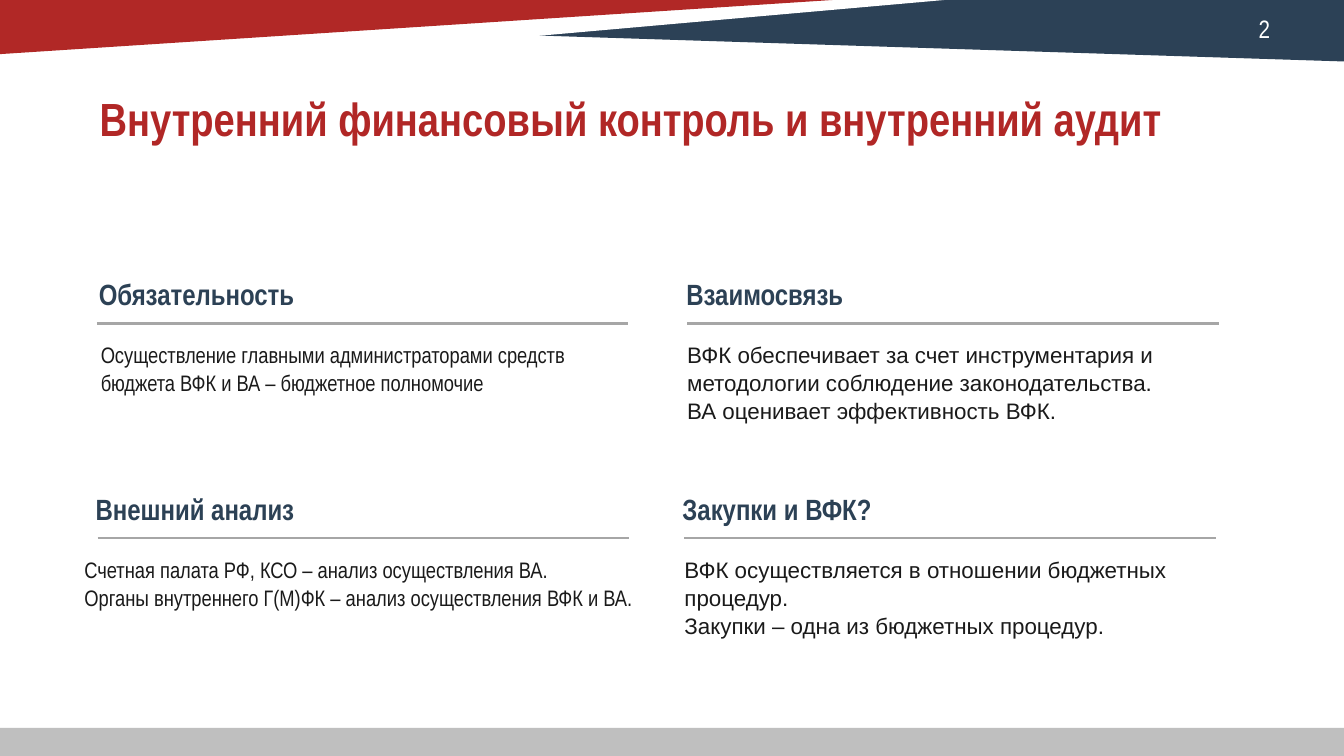
"""Build a slide on internal financial control and internal audit."""
from dataclasses import dataclass

from lxml.etree import SubElement
from pptx import Presentation
from pptx.dml.color import RGBColor
from pptx.enum.shapes import MSO_CONNECTOR as Connector, MSO_SHAPE as Shape
from pptx.oxml.ns import qn
from pptx.util import Cm, Pt

COLORS = {
    "navy": "2C4156",
    "heading": "2C4155",
    "red": "B12826",
    "title": "B12726",
    "text": "1A1A1A",
    "rule": "A6A6A6",
    "footer": "BFBFBF",
    "white": "FFFFFF",
}
NARROW = "Arial Narrow"
WIDTH, HEIGHT = 33.87, 19.05
COLUMN_WIDTH = 13.39
FIRST_ROW, ROW_PITCH = 6.93, 5.41
RULE_OFFSET, BODY_OFFSET = 1.22, 1.63


@dataclass
class Topic:
    row: int
    heading: str
    lines: list
    heading_left: float
    rule_left: float
    body_left: float
    body_width: float = COLUMN_WIDTH
    body_font: str = NARROW


TOPICS = [
    Topic(0, "Обязательность",
          ["Осуществление главными администраторами средств бюджета ВФК и ВА – бюджетное полномочие"],
          2.49, 2.44, 2.54),
    Topic(0, "Взаимосвязь",
          ["ВФК обеспечивает за счет инструментария и методологии соблюдение законодательства.",
           "ВА оценивает эффективность ВФК."],
          17.3, 17.32, 17.32, body_font="Arial"),
    Topic(1, "Внешний анализ",
          ["Счетная палата РФ, КСО – анализ осуществления ВА.",
           "Органы внутреннего Г(М)ФК – анализ осуществления ВФК и ВА."],
          2.41, 2.46, 2.13, body_width=14.4),
    Topic(1, "Закупки и ВФК?",
          ["ВФК осуществляется в отношении бюджетных процедур.",
           "Закупки – одна из бюджетных процедур."],
          17.2, 17.25, 17.25, body_font="Arial"),
]


def rgb(name):
    return RGBColor.from_string(COLORS[name])


def paint(shape, color):
    shape.shadow.inherit = False
    shape.fill.solid()
    shape.fill.fore_color.rgb = rgb(color)
    shape.line.fill.background()


def add_wedge(slide, points, color):
    start, *others = [(Cm(x), Cm(y)) for x, y in points]
    builder = slide.shapes.build_freeform(*start)
    builder.add_line_segments(others, close=True)
    paint(builder.convert_to_shape(), color)


def add_text(slide, box, lines, size, color, font=NARROW, bold=False, spacing=1.05):
    frame = slide.shapes.add_textbox(*map(Cm, box)).text_frame
    frame.word_wrap = True
    frame.margin_left = frame.margin_right = frame.margin_top = frame.margin_bottom = 0
    for index, line in enumerate(lines):
        paragraph = frame.add_paragraph() if index else frame.paragraphs[0]
        paragraph.line_spacing = spacing
        run = paragraph.add_run()
        run.text = line
        run.font.name = font
        run.font.size = Pt(size)
        run.font.bold = bold
        run.font.color.rgb = rgb(color)


def add_rule(slide, left, top):
    rule = slide.shapes.add_connector(
        Connector.STRAIGHT, Cm(left), Cm(top), Cm(left + COLUMN_WIDTH), Cm(top))
    rule.line.color.rgb = rgb("rule")
    rule.line.width = Pt(1.75)
    SubElement(rule._element.spPr, qn("a:effectLst"))


def add_topic(slide, topic):
    top = FIRST_ROW + topic.row * ROW_PITCH
    add_text(slide, (topic.body_left, top + BODY_OFFSET, topic.body_width, 0.68 * 3),
             topic.lines, 16, "text", topic.body_font)
    add_rule(slide, topic.rule_left, top + RULE_OFFSET)
    add_text(slide, (topic.heading_left, top, COLUMN_WIDTH, 0.89),
             [topic.heading], 20.9, "heading", bold=True)


def add_frame(slide):
    add_wedge(slide, [(33.87, -0.13), (33.87, 1.55), (10.29, 0.79), (4.93, -0.13)], "navy")
    add_wedge(slide, [(-0.08, -0.1), (-0.08, 2.11), (24.94, -0.1)], "white")
    add_wedge(slide, [(-0.08, -0.1), (-0.08, 1.37), (22.53, -0.1)], "red")
    footer = slide.shapes.add_shape(Shape.RECTANGLE, 0, Cm(18.34), Cm(WIDTH), Cm(0.71))
    paint(footer, "footer")
    add_text(slide, (31.72, 0.33, 2, 0.76), ["2"], 18, "white", spacing=1)


def main():
    presentation = Presentation()
    presentation.slide_width, presentation.slide_height = Cm(WIDTH), Cm(HEIGHT)
    slide = presentation.slides.add_slide(presentation.slide_layouts[6])
    add_frame(slide)
    add_text(slide, (2.51, 2.39, 29.18, 2.16),
             ["Внутренний финансовый контроль и внутренний аудит"],
             33.2, "title", bold=True, spacing=0.93)
    for topic in TOPICS:
        add_topic(slide, topic)
    presentation.save("out.pptx")


if __name__ == "__main__":
    main()
